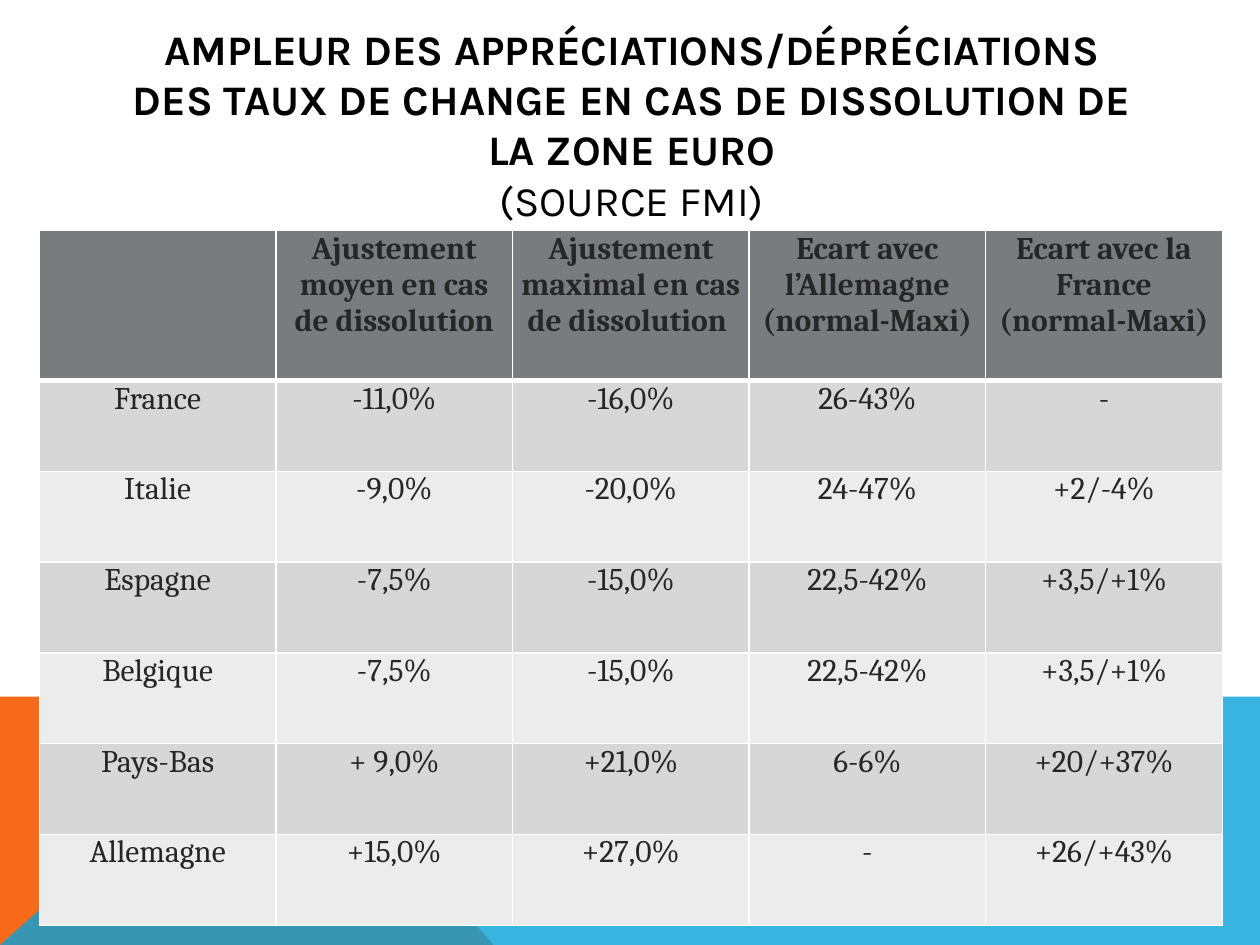
from lxml.etree import SubElement
from pptx import Presentation
from pptx.dml.color import RGBColor
from pptx.enum.text import MSO_ANCHOR as Anchor, PP_ALIGN as Align
from pptx.oxml.ns import qn
from pptx.util import Pt

TITLE = ("AMPLEUR DES APPRÉCIATIONS/DÉPRÉCIATIONS DES TAUX DE CHANGE "
         "EN CAS DE DISSOLUTION DE LA ZONE EURO")
SOURCE = "(SOURCE FMI)"
ROWS = [
    ("", "Ajustement moyen en cas de dissolution",
     "Ajustement maximal en cas de dissolution ",
     "Ecart avec l’Allemagne\n(normal-Maxi)", "Ecart avec la France\n(normal-Maxi)"),
    ("France", "-11,0%", "-16,0%", "26-43%", "-"),
    ("Italie", "-9,0%", "-20,0%", "24-47%", "+2/-4%"),
    ("Espagne", "-7,5%", "-15,0%", "22,5-42%", "+3,5/+1%"),
    ("Belgique", "-7,5%", "-15,0%", "22,5-42%", "+3,5/+1%"),
    ("Pays-Bas", "+ 9,0%", "+21,0%", "6-6%", "+20/+37%"),
    ("Allemagne", "+15,0%", "+27,0%", "-", "+26/+43%"),
]

BLACK = RGBColor(0x00, 0x00, 0x00)
WHITE = RGBColor(0xFF, 0xFF, 0xFF)
INK = RGBColor(0x26, 0x26, 0x26)
HEADER = RGBColor(0x79, 0x7B, 0x7E)
BANDS = [RGBColor(0xEC, 0xEC, 0xEC), RGBColor(0xD7, 0xD7, 0xD8)]
ORANGE = RGBColor(0xF9, 0x6A, 0x1B)
BLUE = RGBColor(0x08, 0xA1, 0xD9)

WIDTH, HEIGHT = 720, 540
BAND_TOP, BAND_PEAK = 397.5, 160.5
BACKDROP = [
    (ORANGE, 100, [(0, HEIGHT), (0, BAND_TOP), (BAND_PEAK, BAND_TOP), (281.5, HEIGHT)]),
    (BLUE, 80, [(0, HEIGHT), (BAND_PEAK, BAND_TOP), (WIDTH, BAND_TOP), (WIDTH, HEIGHT)]),
]
TITLE_BOX = (65, 10.8, 592, 120.2)
TABLE_LEFT, TABLE_TOP = 22.5, 131.8
COLUMN_WIDTH, HEADER_HEIGHT, ROW_HEIGHT = 135.2, 85.7, 51.9
TITLE_FONT = {"name": "Karla", "size": Pt(24)}
CELL_FONT = {"name": "Cambria", "size": Pt(18)}
CELL_FORMAT = {"margin_left": Pt(5), "margin_right": Pt(5), "margin_top": 0,
               "margin_bottom": 0, "vertical_anchor": Anchor.TOP}


def apply(target, values):
    for name, value in values.items():
        setattr(target, name, value)


def add_span(para, text, font, color, bold):
    span = para.add_run()
    span.text = text
    apply(span.font, {**font, "bold": bold})
    span.font.color.rgb = color


def add_backdrop(page, color, opacity, points):
    builder = page.shapes.build_freeform(*points[0], scale=Pt(1))
    builder.add_line_segments(points[1:], close=True)
    shape = builder.convert_to_shape()
    shape.shadow.inherit = False
    shape.fill.solid()
    shape.fill.fore_color.rgb = color
    shape.line.fill.background()
    if opacity < 100:
        tint = shape.fill._xPr.find(qn("a:solidFill"))[0]
        SubElement(tint, qn("a:alpha"), val=str(opacity * 1000))


def add_title(page):
    frame = page.shapes.add_textbox(*map(Pt, TITLE_BOX)).text_frame
    apply(frame, {"word_wrap": True, "vertical_anchor": Anchor.MIDDLE})
    para = frame.paragraphs[0]
    apply(para, {"alignment": Align.CENTER, "line_spacing": Pt(28.7)})
    add_span(para, TITLE, TITLE_FONT, BLACK, True)
    para.add_line_break()
    add_span(para, SOURCE, TITLE_FONT, BLACK, False)


def set_borders(cell, widths):
    properties = cell._tc.get_or_add_tcPr()
    for position, (side, width) in enumerate(widths.items()):
        line = properties.makeelement(qn(f"a:ln{side}"), {"w": str(Pt(width))})
        fill = SubElement(line, qn("a:solidFill"))
        SubElement(fill, qn("a:srgbClr"), val=str(WHITE))
        properties.insert(position, line)


def fill_cell(cell, text, row):
    header = row == 0
    apply(cell, CELL_FORMAT)
    cell.fill.solid()
    cell.fill.fore_color.rgb = HEADER if header else BANDS[row % 2]
    set_borders(cell, {"L": 1, "R": 1, "T": 3 if row == 1 else 1, "B": 3 if header else 1})
    frame = cell.text_frame
    for index, line in enumerate(text.split("\n") if text else []):
        para = frame.add_paragraph() if index else frame.paragraphs[0]
        para.alignment = Align.CENTER
        add_span(para, line, CELL_FONT, INK, header)


def add_rates(page):
    heights = [HEADER_HEIGHT] + [ROW_HEIGHT] * (len(ROWS) - 1)
    columns = len(ROWS[0])
    table = page.shapes.add_table(
        len(ROWS), columns, Pt(TABLE_LEFT), Pt(TABLE_TOP),
        Pt(COLUMN_WIDTH * columns), Pt(sum(heights))).table
    for column in table.columns:
        column.width = Pt(COLUMN_WIDTH)
    for row, (height, texts) in enumerate(zip(heights, ROWS)):
        table.rows[row].height = Pt(height)
        for column, text in enumerate(texts):
            fill_cell(table.cell(row, column), text, row)


def main():
    deck = Presentation()
    apply(deck, {"slide_width": Pt(WIDTH), "slide_height": Pt(HEIGHT)})
    page = deck.slides.add_slide(deck.slide_layouts[6])
    for color, opacity, points in BACKDROP:
        add_backdrop(page, color, opacity, points)
    add_title(page)
    add_rates(page)
    deck.save("out.pptx")


if __name__ == "__main__":
    main()
